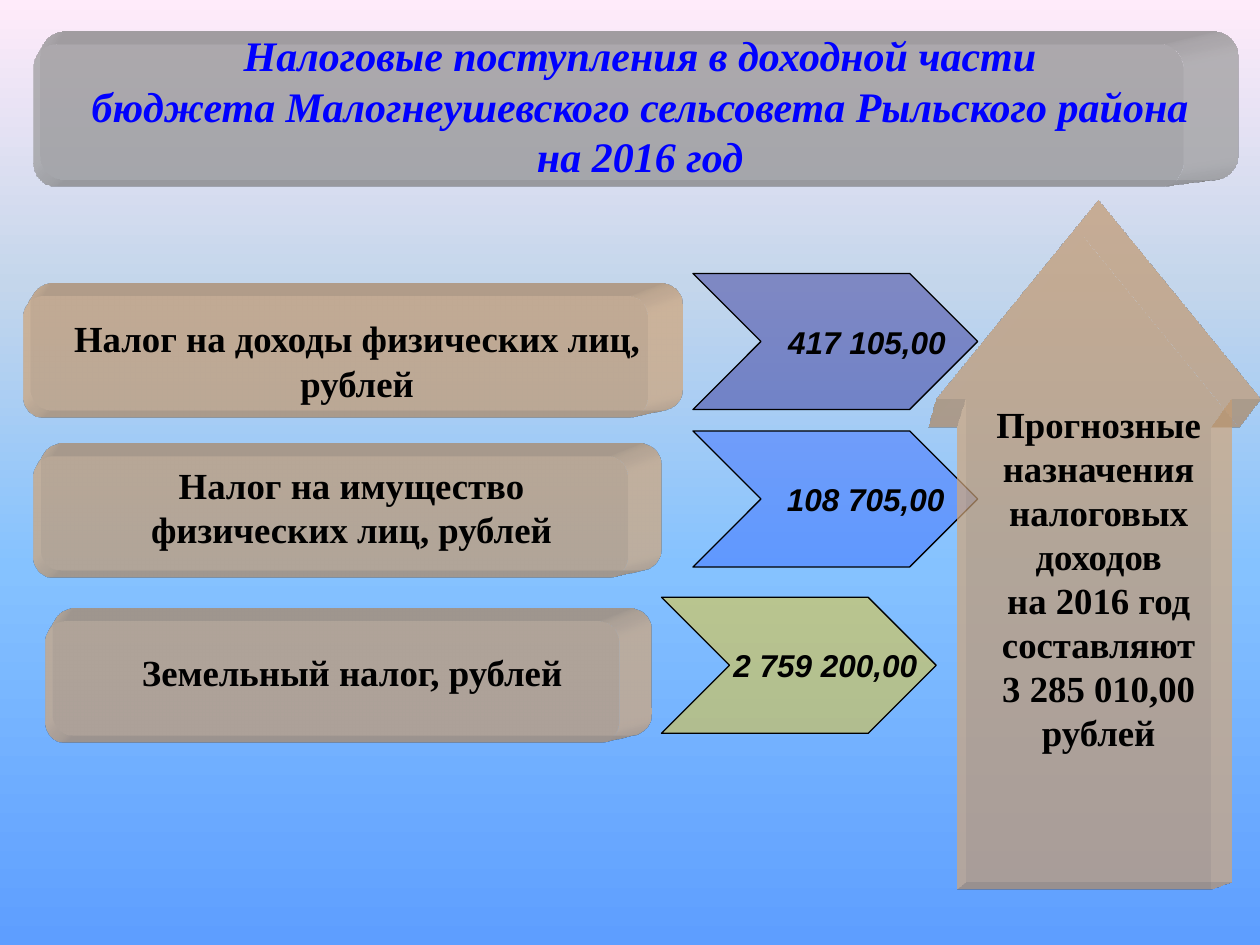
from lxml import etree
from pptx import Presentation
from pptx.dml.color import RGBColor
from pptx.enum.shapes import MSO_SHAPE
from pptx.enum.text import MSO_ANCHOR, PP_ALIGN
from pptx.oxml import parse_xml
from pptx.oxml.ns import nsdecls, qn
from pptx.util import Inches, Pt

PLATE = MSO_SHAPE.FLOWCHART_ALTERNATE_PROCESS
ROUNDED = MSO_SHAPE.ROUNDED_RECTANGLE
CHEVRON = MSO_SHAPE.CHEVRON
UP_ARROW = MSO_SHAPE.UP_ARROW
MIDDLE = MSO_ANCHOR.MIDDLE
CENTER = PP_ALIGN.CENTER

COLORS = {
    "plate": "C0C0C0",
    "peach": "FFCC99",
    "indigo": "333399",
    "blue": "3366FF",
    "gold": "FFCC00",
    "title": "0000FF",
    "text": "000000",
}
BACKGROUND_STOPS = [(0, "FFEBFA"), (30, "C4D6EB"), (60, "85C2FF"), (100, "5E9EFF")]
SERIF = "Times New Roman"
SANS = "Arial"

TITLE_BOX = (0.33, 0.25, 9.5, 1.17)
TITLE_LINES = [
    "Налоговые поступления в доходной части",
    "бюджета Малогнеушевского сельсовета Рыльского района",
    "на 2016 год",
]
# box, lines, top inset
TAXES = [
    ((0.25, 2.25, 5.17, 1), ["Налог на доходы физических лиц, рублей"], 0.27),
    ((0.33, 3.52, 4.92, 1), ["Налог на имущество", "физических лиц, рублей"], 0.05),
    ((0.42, 4.83, 4.75, 1), ["Земельный налог, рублей"], 0.05),
]
# box, colour, opacity, amount, left inset
AMOUNTS = [
    ((5.5, 2.17, 2.26, 1.08), "indigo", 48, "417 105,00", 0.6),
    ((5.5, 3.42, 2.26, 1.08), "blue", 45, "108 705,00", 0.58),
    ((5.25, 4.74, 2.18, 1.08), "gold", 44, "2 759 200,00", 0.52),
]
FORECAST_LINES = [
    "Прогнозные", "назначения", "налоговых", "доходов", "на 2016 год",
    "составляют", "3 285 010,00 рублей",
]


def set_background(slide):
    fill = slide.background.fill
    fill.gradient()
    fill.gradient_angle = 270
    stops = slide.background._cSld.find(".//" + qn("a:gsLst"))
    for stop in list(stops):
        stops.remove(stop)
    for position, color in BACKGROUND_STOPS:
        stop = etree.SubElement(stops, qn("a:gs"), pos=str(position * 1000))
        etree.SubElement(stop, qn("a:srgbClr"), val=color)


def add_translucent_shape(slide, kind, box, color, opacity, adjustments=()):
    shape = slide.shapes.add_shape(kind, *map(Inches, box))
    for index, value in enumerate(adjustments):
        shape.adjustments[index] = value
    shape.shadow.inherit = False
    shape.fill.solid()
    shape.fill.fore_color.rgb = RGBColor.from_string(COLORS[color])
    shape.line.fill.background()
    rgb = shape._element.spPr.find(qn("a:solidFill")).find(qn("a:srgbClr"))
    etree.SubElement(rgb, qn("a:alpha"), val=str(opacity * 1000))
    return shape


def extrude(shape, color):
    """Give the shape a solid depth that recedes to the lower left."""
    properties = shape._element.spPr
    properties.append(parse_xml(
        f'<a:scene3d {nsdecls("a")}><a:camera prst="legacyPerspectiveBottomLeft"/>'
        '<a:lightRig rig="legacyFlat3" dir="t"/></a:scene3d>'))
    properties.append(parse_xml(
        f'<a:sp3d {nsdecls("a")} extrusionH="430200" prstMaterial="legacyMatte">'
        f'<a:extrusionClr><a:srgbClr val="{COLORS[color]}"/></a:extrusionClr></a:sp3d>'))


def write_lines(shape, lines, size, font=SERIF, color="text", italic=False, wrap=True,
                left=0.1, top=0.05, bottom=0.05):
    frame = shape.text_frame
    frame.word_wrap = wrap
    frame.vertical_anchor = MIDDLE
    frame.margin_left, frame.margin_right = Inches(left), Inches(0.1)
    frame.margin_top, frame.margin_bottom = Inches(top), Inches(bottom)
    frame.text = "\n".join(lines)
    for paragraph in frame.paragraphs:
        paragraph.alignment = CENTER
        paragraph.line_spacing = 1.0
        paragraph.space_before = Pt(0)
        paragraph.font.name = font
        paragraph.font.size = Pt(size)
        paragraph.font.bold = True
        paragraph.font.italic = italic
        paragraph.font.color.rgb = RGBColor.from_string(COLORS[color])


def add_title(slide):
    plate = add_translucent_shape(slide, PLATE, TITLE_BOX, "plate", 49)
    extrude(plate, "plate")
    title = slide.shapes.title
    title.left, title.top, title.width, title.height = map(Inches, TITLE_BOX)
    write_lines(title, TITLE_LINES, 24, color="title", italic=True, wrap=False)
    plate._element.addnext(title._element)


def add_tax(slide, box, lines, top):
    shape = add_translucent_shape(slide, ROUNDED, box, "peach", 49, [0.167])
    extrude(shape, "peach")
    write_lines(shape, lines, 21, top=top)


def add_amount(slide, box, color, opacity, amount, left):
    shape = add_translucent_shape(slide, CHEVRON, box, color, opacity, [0.5])
    shape.line.color.rgb = RGBColor.from_string(COLORS["text"])
    shape.line.width = Pt(0.75)
    write_lines(shape, [amount], 18, font=SANS, italic=True, wrap=False, left=left)


def add_forecast(slide):
    arrow = add_translucent_shape(
        slide, UP_ARROW, (7.43, 1.58, 2.58, 5.42), "peach", 49, [0.817, 0.614])
    extrude(arrow, "peach")
    write_lines(arrow, FORECAST_LINES, 21, bottom=0.75)


def main():
    presentation = Presentation()
    presentation.slide_width = Inches(10)
    presentation.slide_height = Inches(7.5)
    slide = presentation.slides.add_slide(presentation.slide_layouts[5])
    set_background(slide)
    add_title(slide)
    for tax in TAXES:
        add_tax(slide, *tax)
    for amount in AMOUNTS:
        add_amount(slide, *amount)
    add_forecast(slide)
    presentation.save("out.pptx")


if __name__ == "__main__":
    main()
